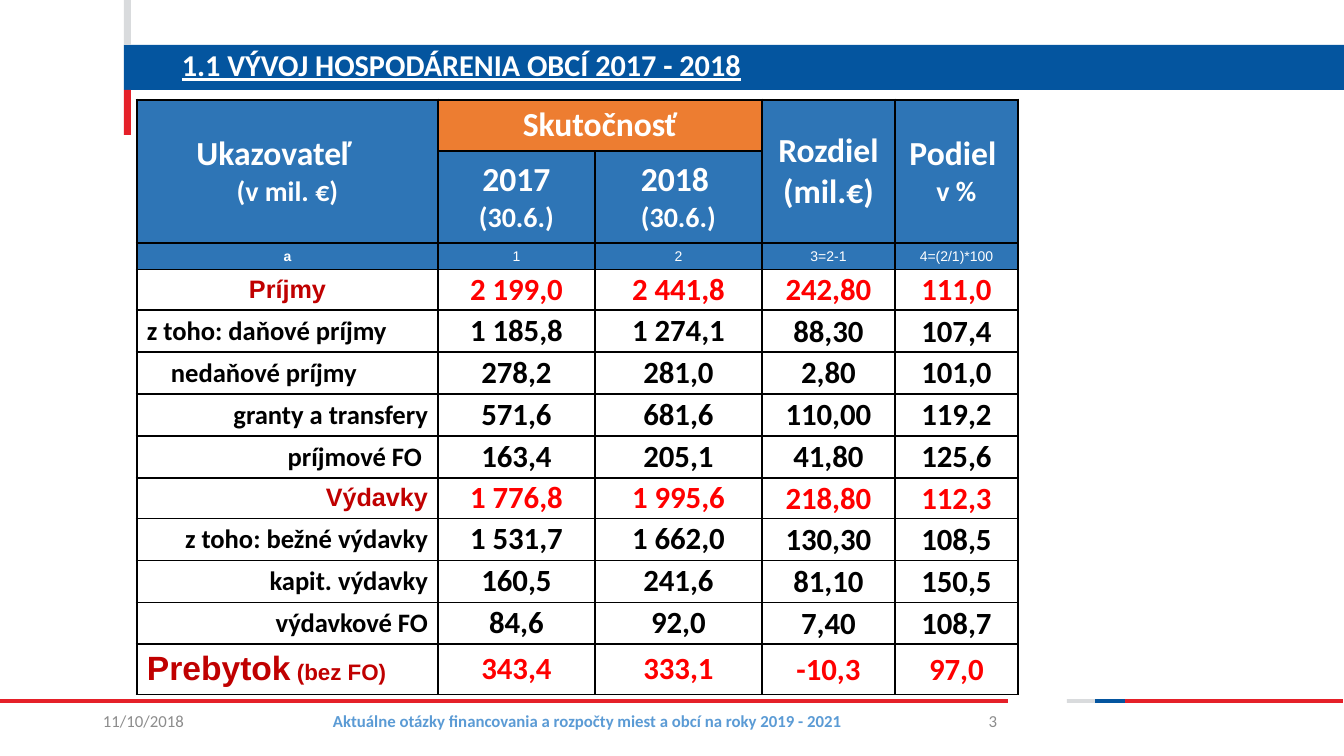
"""Build the slide on municipal budgets 2017 - 2018."""
from pptx import Presentation
from pptx import util as u
from pptx.dml.color import RGBColor
from pptx.enum import shapes, text
from pptx.oxml import parse_xml
from pptx.oxml.ns import nsdecls

COLORS = {
    "blue": "04559F", "red": "E52029", "grey": "D9DBDD", "header": "2E75B6",
    "orange": "ED7D31", "white": "FFFFFF", "black": "000000", "muted": "8C8C8C",
    "sky": "5B9BD5", "crimson": "C00000", "bright": "FF0000",
}
ALIGN = {"l": text.PP_ALIGN.LEFT, "c": text.PP_ALIGN.CENTER, "r": text.PP_ALIGN.RIGHT}
BARS = [
    (124, 45, 1220, 45, "blue"), (1125, 699, 218, 4, "red"), (1095, 699, 30, 4, "blue"),
    (1067, 699, 28, 4, "grey"), (0, 699, 1008, 4, "red"),
    (124, 90, 7, 45, "red"), (124, 0, 7, 45, "grey"),
]
COLUMNS = [301, 157, 167, 133, 123]
ROWS = [51, 92, 26, 40, 42, 42, 42, 42, 40, 42, 42, 42, 49]
HEADINGS = [
    (0, 0, "header", 27, [("Ukazovateľ", 24), ("(v mil. €)", 20)]),
    (0, 1, "orange", 0, [("Skutočnosť", 24)]),
    (0, 3, "header", 0, [("Rozdiel", 24), ("(mil.€)", 24)]),
    (0, 4, "header", 7, [("Podiel", 24), ("v %", 20)]),
    (1, 1, "header", 0, [("2017", 24), ("(30.6.)", 20)]),
    (1, 2, "header", 7, [("2018", 24), ("(30.6.)", 20)]),
]
FORMULAS = ["a", "1", "2", "3=2-1", "4=(2/1)*100"]
INDICATORS = [
    ("Príjmy", "c", 10, 10, "2 199,0", "2 441,8", "242,80", "111,0"),
    ("z toho: daňové príjmy", "l", 10, 10, "1 185,8", "1 274,1", "88,30", "107,4"),
    ("nedaňové príjmy", "l", 34, 10, "278,2", "281,0", "2,80", "101,0"),
    ("granty a transfery", "r", 10, 10, "571,6", "681,6", "110,00", "119,2"),
    ("príjmové FO", "r", 10, 16, "163,4", "205,1", "41,80", "125,6"),
    ("Výdavky", "r", 10, 10, "1 776,8", "1 995,6", "218,80", "112,3"),
    ("z toho: bežné výdavky", "r", 10, 10, "1 531,7", "1 662,0", "130,30", "108,5"),
    ("kapit. výdavky", "r", 10, 10, "160,5", "241,6", "81,10", "150,5"),
    ("výdavkové FO", "r", 10, 10, "84,6", "92,0", "7,40", "108,7"),
    ("Prebytok", "l", 10, 10, "343,4", "333,1", "-10,3", "97,0"),
]
TOTALS = {"Príjmy": 18, "Výdavky": 18, "Prebytok": 24}


def px(length):
    """Turn a length in px into EMU."""
    return u.Emu(round(length * 914400 / 100.8))


def rgb(color):
    """Look up a named colour."""
    return RGBColor.from_string(COLORS[color])


def apply(target, values):
    """Set each attribute named in values on target."""
    for name, value in values.items():
        setattr(target, name, value)


def add_words(paragraph, words, size, color, name="Calibri", bold=True, underline=False):
    """Append a formatted run to a paragraph."""
    run = paragraph.add_run()
    run.text = words
    apply(run.font, {"size": u.Pt(size), "name": name, "bold": bold, "underline": underline})
    run.font.color.rgb = rgb(color)


def add_bar(slide, left, top, width, height, color):
    """Draw a plain coloured bar."""
    bar = slide.shapes.add_shape(
        shapes.MSO_SHAPE.RECTANGLE, px(left), px(top), px(width), px(height))
    bar.shadow.inherit = False
    bar.fill.solid()
    bar.fill.fore_color.rgb = rgb(color)
    bar.line.fill.background()


def add_label(slide, box, words, align, size, color, spacing=1.0, **style):
    """Place one line of text, centred vertically in its box."""
    frame = slide.shapes.add_textbox(*map(px, box)).text_frame
    apply(frame, {"word_wrap": True, "vertical_anchor": text.MSO_ANCHOR.MIDDLE})
    line = frame.paragraphs[0]
    apply(line, {"alignment": ALIGN[align], "line_spacing": spacing})
    add_words(line, words, size, color, **style)


def set_borders(cell, row, column):
    """Rule a cell in black, heavier on the table's left and top edges."""
    heavy = {"L": column == 0, "T": row == 0}
    for side in "LRTB":
        width = u.Pt(2.25 if heavy.get(side) else 1)
        cell._tc.get_or_add_tcPr().append(parse_xml(
            f'<a:ln{side} {nsdecls("a")} w="{width}"><a:solidFill>'
            f'<a:srgbClr val="{COLORS["black"]}"/></a:solidFill></a:ln{side}>'))


def set_fill(cell, color):
    """Fill a cell with a named colour."""
    cell.fill.solid()
    cell.fill.fore_color.rgb = rgb(color)


def set_margins(cell, left, top, right, bottom):
    """Set the cell's inner margins in px."""
    apply(cell, {"margin_left": px(left), "margin_top": px(top),
                 "margin_right": px(right), "margin_bottom": px(bottom)})


def start_cell(cell, align="c"):
    """Return the aligned first paragraph of a cell."""
    line = cell.text_frame.paragraphs[0]
    line.alignment = ALIGN[align]
    return line


def fill_headings(table):
    """Write the heading cells, shifting first lines left by half their lag."""
    for row, column, color, lag, lines in HEADINGS:
        cell = table.cell(row, column)
        set_fill(cell, color)
        set_margins(cell, 10, 5, 10 + lag, 5)
        for number, (words, size) in enumerate(lines):
            line = cell.text_frame.add_paragraph() if number else start_cell(cell)
            line.alignment = ALIGN["c"]
            if number and lag:
                line._p.get_or_add_pPr().set("marL", str(px(lag)))
            add_words(line, words, size, "white")
    for column, words in enumerate(FORMULAS):
        cell = table.cell(2, column)
        set_fill(cell, "header")
        add_words(start_cell(cell), words, 10, "white", name="Arial", bold=column == 0)


def fill_indicators(table):
    """Write one row per indicator, with totals in red."""
    for row, (name, align, left, right, *values) in enumerate(INDICATORS, 3):
        total = name in TOTALS
        cell = table.cell(row, 0)
        set_margins(cell, left, 5, right, 5)
        line = start_cell(cell, align)
        if total:
            add_words(line, name, TOTALS[name], "crimson", name="Arial")
        else:
            add_words(line, name, 19, "black")
        if name == "Prebytok":
            add_words(line, " (bez FO)", 16, "crimson", name="Arial")
        for column, value in enumerate(values, 1):
            cell = table.cell(row, column)
            edge = int(column > 2)
            set_margins(cell, edge, edge, edge, 0)
            add_words(start_cell(cell), value, 22, "bright" if total else "black")


def add_budget_table(slide):
    """Build the table of municipal income and spending."""
    table = slide.shapes.add_table(
        len(ROWS), len(COLUMNS), px(137), px(100), px(sum(COLUMNS)), px(sum(ROWS))).table
    apply(table, {"first_row": False, "horz_banding": False})
    for column, width in zip(table.columns, COLUMNS):
        column.width = px(width)
    for row, height in zip(table.rows, ROWS):
        row.height = px(height)
    for row in range(len(ROWS)):
        for column in range(len(COLUMNS)):
            cell = table.cell(row, column)
            set_borders(cell, row, column)
            cell.fill.background()
            cell.vertical_anchor = text.MSO_ANCHOR.MIDDLE
            set_margins(cell, 10, 5, 10, 5)
    for column in (0, 3, 4):
        table.cell(0, column).merge(table.cell(1, column))
    table.cell(0, 1).merge(table.cell(0, 2))
    fill_headings(table)
    fill_indicators(table)


def main():
    """Assemble and save the slide."""
    deck = Presentation()
    apply(deck, {"slide_width": px(1344), "slide_height": px(756)})
    slide = deck.slides.add_slide(deck.slide_layouts[6])
    for bar in BARS:
        add_bar(slide, *bar)
    add_label(slide, (172, 45, 1110, 44), "1.1 VÝVOJ HOSPODÁRENIA OBCÍ 2017 - 2018",
              "l", 21.6, "white", spacing=0.9, underline=True)
    add_label(slide, (93, 701, 128, 40), "11/10/2018", "l", 12, "muted", bold=False)
    add_label(slide, (276, 701, 623, 40),
              "Aktuálne otázky financovania a rozpočty miest a obcí na roky 2019 - 2021",
              "c", 12, "sky")
    add_label(slide, (919, 701, 88, 40), "3", "r", 12, "muted", bold=False)
    add_budget_table(slide)
    deck.save("out.pptx")


if __name__ == "__main__":
    main()
